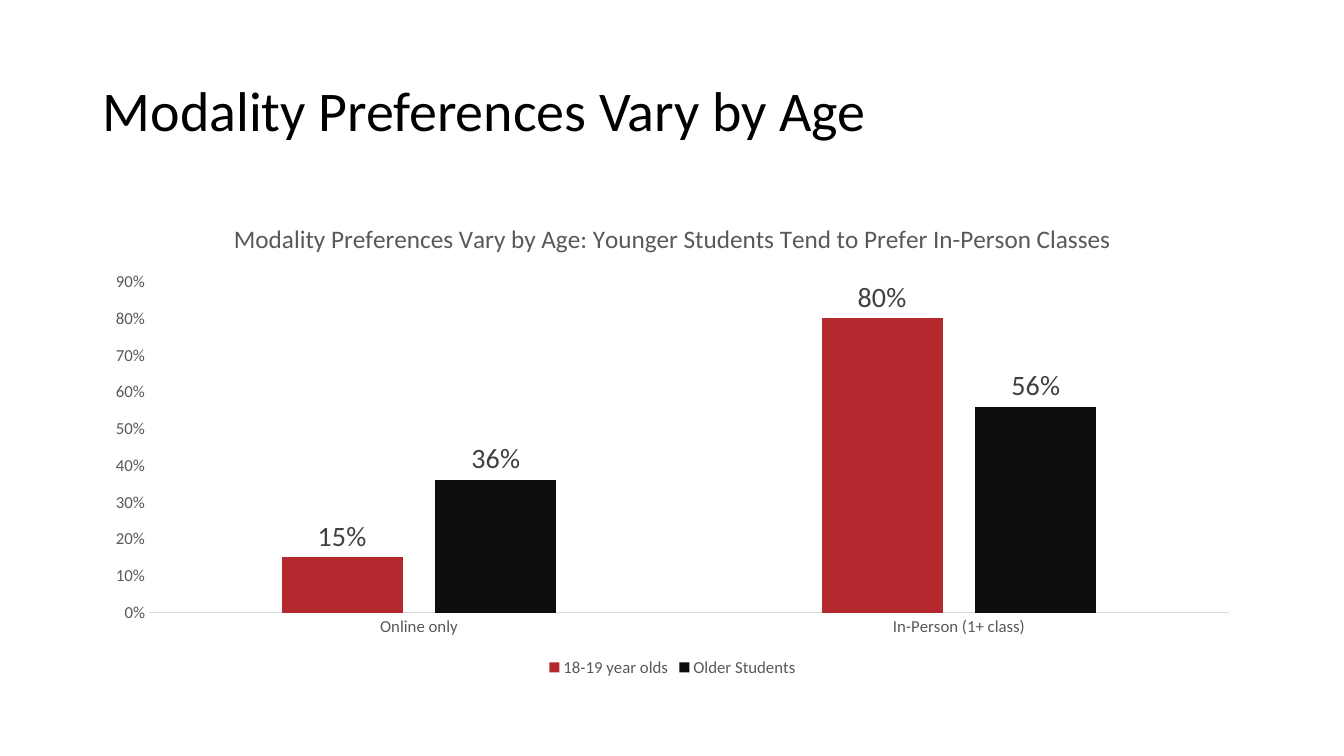
import pptx
import pptx.chart.data
import pptx.dml.color
import pptx.enum.chart
import pptx.enum.text
import pptx.util

RED = pptx.dml.color.RGBColor(0xB5, 0x29, 0x2E)
INK = pptx.dml.color.RGBColor(0x0D, 0x0D, 0x0D)
BLACK = pptx.dml.color.RGBColor(0, 0, 0)
DARK = pptx.dml.color.RGBColor(0x40, 0x40, 0x40)
GRAY = pptx.dml.color.RGBColor(0x59, 0x59, 0x59)
PALE = pptx.dml.color.RGBColor(0xD9, 0xD9, 0xD9)

WIDTH, HEIGHT = 13.33, 7.5
LEFT, SPAN = 0.92 / WIDTH, 11.5 / WIDTH


class Deck:
    face = "Calibri"

    def __init__(self):
        self.show = pptx.Presentation()
        self.show.slide_width = pptx.util.Inches(WIDTH)
        self.show.slide_height = pptx.util.Inches(HEIGHT)
        self.slide = self.show.slides.add_slide(self.show.slide_layouts[6])

    def area(self, left, top, width, height):
        wide, high = self.show.slide_width, self.show.slide_height
        return [int(share * size) for share, size in
                zip((left, top, width, height), (wide, high, wide, high))]

    def style(self, font, size, color):
        font.name = self.face
        font.size = pptx.util.Pt(size)
        font.bold = False
        font.color.rgb = color

    def title(self, text, area, size):
        frame = self.slide.shapes.add_textbox(*self.area(*area)).text_frame
        frame.word_wrap = True
        frame.vertical_anchor = pptx.enum.text.MSO_ANCHOR.MIDDLE
        frame.text = text
        line = frame.paragraphs[0]
        line.line_spacing = 0.9
        self.style(line.runs[0].font, size, BLACK)

    def bars(self, head, groups, series, area):
        data = pptx.chart.data.CategoryChartData(number_format="0%")
        data.categories = groups
        for name, values, _ in series:
            data.add_series(name, values)
        kind = pptx.enum.chart.XL_CHART_TYPE.COLUMN_CLUSTERED
        chart = self.slide.shapes.add_chart(kind, *self.area(*area), data).chart
        self.style(chart.font, 10, BLACK)
        frame = chart.chart_title.text_frame
        frame.text = head
        self.style(frame.paragraphs[0].runs[0].font, 18, GRAY)
        chart.chart_title.include_in_layout = False
        chart.has_legend = True
        chart.legend.position = pptx.enum.chart.XL_LEGEND_POSITION.BOTTOM
        chart.legend.include_in_layout = False
        self.style(chart.legend.font, 12, GRAY)
        self.axes(chart)
        plot = chart.plots[0]
        plot.gap_width, plot.overlap = 219, -27
        plot.vary_by_categories = False
        for bar, (_, _, color) in zip(plot.series, series):
            self.paint(bar, color)

    def axes(self, chart):
        none = pptx.enum.chart.XL_TICK_MARK.NONE
        for axis in (chart.category_axis, chart.value_axis):
            axis.major_tick_mark = axis.minor_tick_mark = none
            axis.has_major_gridlines = False
            self.style(axis.tick_labels.font, 12, GRAY)
        base = chart.category_axis.format.line
        base.color.rgb = PALE
        base.width = pptx.util.Pt(0.75)
        scale = chart.value_axis
        scale.format.line.fill.background()
        scale.minimum_scale, scale.maximum_scale = 0, 0.9
        scale.major_unit = 0.1
        scale.tick_labels.number_format = "0%"
        scale.tick_labels.number_format_is_linked = False

    def paint(self, bar, color):
        bar.format.fill.solid()
        bar.format.fill.fore_color.rgb = color
        bar.invert_if_negative = False
        labels = bar.data_labels
        labels.show_value = True
        labels.number_format = "0%"
        labels.number_format_is_linked = False
        labels.position = pptx.enum.chart.XL_LABEL_POSITION.OUTSIDE_END
        self.style(labels.font, 20, DARK)


def main():
    deck = Deck()
    deck.title("Modality Preferences Vary by Age",
               (LEFT, 0.4 / HEIGHT, SPAN, 1.45 / HEIGHT), 40)
    deck.bars(
        "Modality Preferences Vary by Age: "
        "Younger Students Tend to Prefer In-Person Classes",
        ("Online only", "In-Person (1+ class)"),
        (("18-19 year olds", (0.15, 0.8), RED),
         ("Older Students", (0.36, 0.56), INK)),
        (LEFT, 2 / HEIGHT, SPAN, 4.76 / HEIGHT))
    deck.show.save("out.pptx")


if __name__ == "__main__":
    main()
